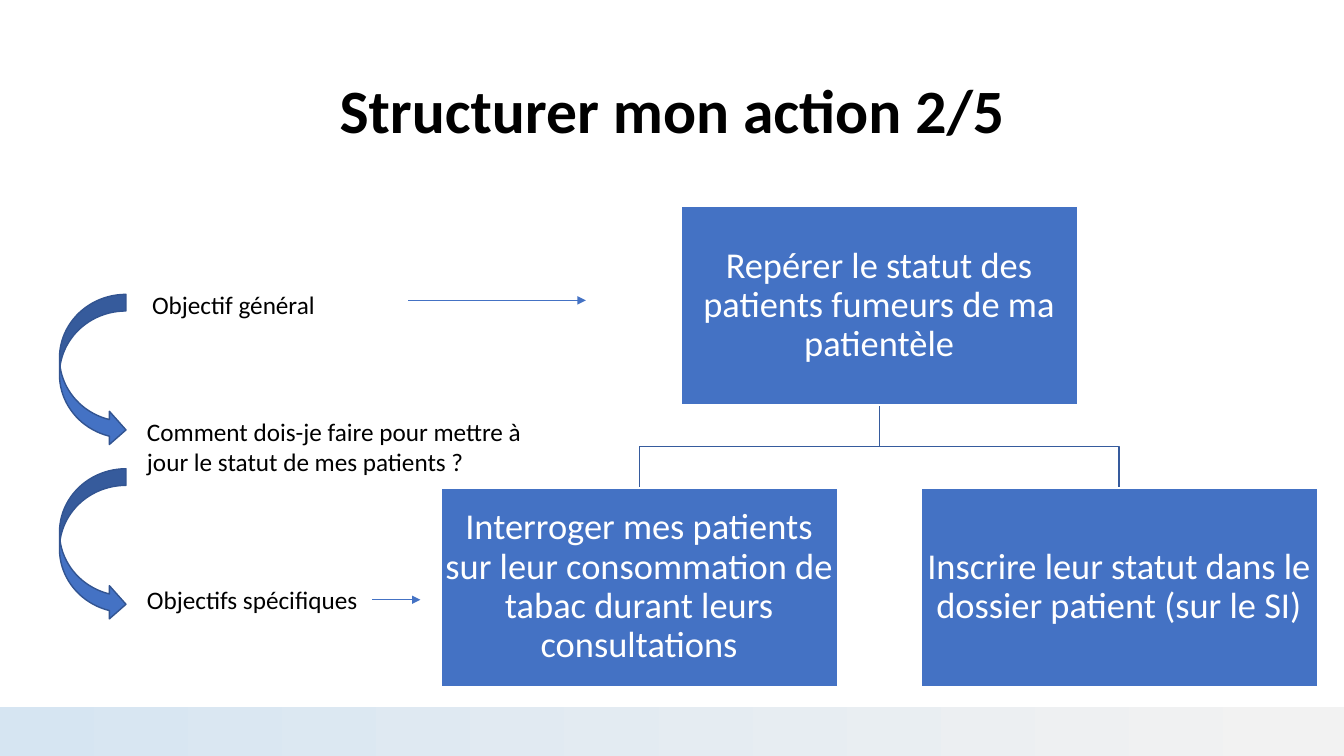
import pptx
import pptx.util
import pptx.dml.color
import pptx.enum.shapes
import pptx.enum.text
import pptx.oxml
import pptx.oxml.ns

Inches = pptx.util.Inches
Pt = pptx.util.Pt
RGBColor = pptx.dml.color.RGBColor
SHAPES = pptx.enum.shapes.MSO_SHAPE
ALIGN = pptx.enum.text.PP_ALIGN
ANCHOR = pptx.enum.text.MSO_ANCHOR

BLACK = RGBColor(0x00, 0x00, 0x00)
WHITE = RGBColor(0xFF, 0xFF, 0xFF)
BLUE = RGBColor(0x44, 0x72, 0xC4)
BRANCH_BLUE = RGBColor(0x36, 0x5B, 0x9D)
EDGE_BLUE = RGBColor(0x32, 0x54, 0x91)
BAND_START = RGBColor(0xD6, 0xE5, 0xF2)
BAND_END = RGBColor(0xF2, 0xF2, 0xF2)

TITLE = "Structurer mon action 2/5"
GENERAL_GOAL = "Repérer le statut des patients fumeurs de ma patientèle"
SPECIFIC_GOALS = [
    "Interroger mes patients sur leur consommation de tabac durant leurs consultations",
    "Inscrire leur statut dans le dossier patient (sur le SI)",
]
STEPS = [
    ("Objectif général", 1.41, 2.82, 2.29, 0.4),
    ("Comment dois-je faire pour mettre à jour le statut de mes patients ?", 1.36, 4.08, 3.97, 0.71),
    ("Objectifs spécifiques", 1.36, 5.75, 2.56, 0.4),
]
POINTERS = [(4.05, 5.81, 2.98), (3.69, 4.17, 5.95)]
CURVED_ARROW_TOPS = [2.92, 4.65]
GOAL_WIDTH, GOAL_HEIGHT = 3.93, 1.97
GENERAL_TOP, SPECIFIC_TOP = 2.05, 4.84
TREE_CENTER, BRANCH_REACH = 8.72, 2.38

deck = pptx.Presentation()
deck.slide_width, deck.slide_height = Inches(13.33), Inches(7.5)
slide = deck.slides.add_slide(deck.slide_layouts[6])


def box(left, top, width, height):
    return [Inches(v) for v in (left, top, width, height)]


def write(holder, text, size=18, color=BLACK, bold=False, align=ALIGN.LEFT,
          anchor=ANCHOR.TOP, spacing=None, inset=None):
    frame = holder.text_frame
    frame.word_wrap = True
    frame.vertical_anchor = anchor
    if inset is not None:
        frame.margin_left = frame.margin_right = Inches(inset)
        frame.margin_top = frame.margin_bottom = Inches(inset)
    paragraph = frame.paragraphs[0]
    paragraph.alignment = align
    paragraph.line_spacing = spacing
    run = paragraph.add_run()
    run.text = text
    run.font.name = "Calibri"
    run.font.size = Pt(size)
    run.font.bold = bold
    run.font.color.rgb = color


def add_filled(kind, left, top, width, height, edge):
    shape = slide.shapes.add_shape(kind, *box(left, top, width, height))
    shape.shadow.inherit = False
    shape.fill.solid()
    shape.fill.fore_color.rgb = BLUE
    shape.line.color.rgb = edge
    shape.line.width = Pt(1)
    return shape


def add_branch(child_center):
    start, end = GENERAL_TOP + GOAL_HEIGHT, SPECIFIC_TOP
    middle = (start + end) / 2
    builder = slide.shapes.build_freeform(Inches(TREE_CENTER), Inches(start))
    corners = [(TREE_CENTER, middle), (child_center, middle), (child_center, end)]
    builder.add_line_segments([(Inches(x), Inches(y)) for x, y in corners], close=False)
    branch = builder.convert_to_shape()
    branch.shadow.inherit = False
    branch.fill.background()
    branch.line.color.rgb = BRANCH_BLUE
    branch.line.width = Pt(1)


def add_goal(text, center, top):
    goal = add_filled(SHAPES.RECTANGLE, center - GOAL_WIDTH / 2, top,
                      GOAL_WIDTH, GOAL_HEIGHT, WHITE)
    write(goal, text, size=26, color=WHITE, align=ALIGN.CENTER,
          anchor=ANCHOR.MIDDLE, spacing=0.9, inset=0.02)


def add_pointer(start, end, y):
    pointer = slide.shapes.add_connector(
        pptx.enum.shapes.MSO_CONNECTOR.STRAIGHT,
        Inches(start), Inches(y), Inches(end), Inches(y))
    pointer.line.color.rgb = BLUE
    pointer.line.width = Pt(0.5)
    head = pptx.oxml.parse_xml(
        '<a:tailEnd %s type="triangle"/>' % pptx.oxml.ns.nsdecls("a"))
    pointer.line._get_or_add_ln().append(head)
    pointer._element.spPr.append(
        pptx.oxml.parse_xml("<a:effectLst %s/>" % pptx.oxml.ns.nsdecls("a")))


write(slide.shapes.add_textbox(*box(0.92, 0.4, 11.5, 1.45)), TITLE, size=44,
      bold=True, align=ALIGN.CENTER, anchor=ANCHOR.MIDDLE, spacing=0.9)

child_centers = [TREE_CENTER - BRANCH_REACH, TREE_CENTER + BRANCH_REACH]
for child_center in child_centers:
    add_branch(child_center)
add_goal(GENERAL_GOAL, TREE_CENTER, GENERAL_TOP)
for goal_text, child_center in zip(SPECIFIC_GOALS, child_centers):
    add_goal(goal_text, child_center, SPECIFIC_TOP)

band = slide.shapes.add_shape(SHAPES.RECTANGLE, *box(0, 7.01, 13.33, 0.49))
band.shadow.inherit = False
band.line.fill.background()
band.fill.gradient()
band.fill.gradient_angle = 0
for stop, color, position in zip(band.fill.gradient_stops, (BAND_START, BAND_END), (0, 0.98)):
    stop.color.rgb = color
    stop.position = position

for step_text, *place in STEPS:
    write(slide.shapes.add_textbox(*box(*place)), step_text)
for arrow_top in CURVED_ARROW_TOPS:
    add_filled(SHAPES.CURVED_RIGHT_ARROW, 0.59, arrow_top, 0.66, 1.51, EDGE_BLUE)
for start, end, y in POINTERS:
    add_pointer(start, end, y)

deck.save("out.pptx")
